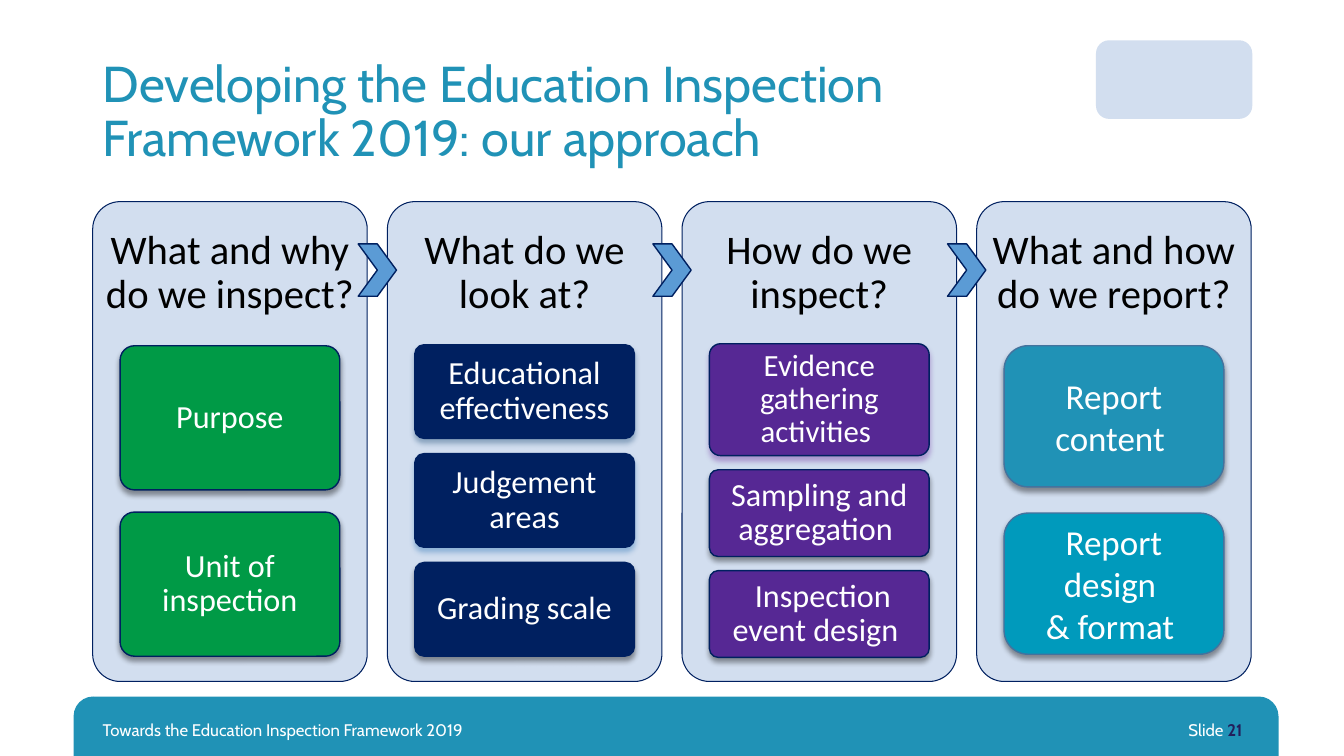
from dataclasses import dataclass
from typing import Any, NamedTuple

from lxml.etree import SubElement
from pptx import Presentation
from pptx.dml.color import RGBColor
from pptx.enum.shapes import MSO_SHAPE as Shape
from pptx.enum.text import MSO_ANCHOR as Anchor, MSO_AUTO_SIZE as AutoSize, PP_ALIGN as Align
from pptx.oxml.ns import qn
from pptx.util import Inches, Pt

WHITE = RGBColor(0xFF, 0xFF, 0xFF)
BLACK = RGBColor(0x00, 0x00, 0x00)
TEAL = RGBColor(0x20, 0x92, 0xB6)
CYAN = RGBColor(0x00, 0x9A, 0xBC)
NAVY = RGBColor(0x00, 0x20, 0x60)
INDIGO = RGBColor(0x22, 0x1E, 0x5B)
GREEN = RGBColor(0x00, 0x9A, 0x46)
PURPLE = RGBColor(0x56, 0x28, 0x94)
VIOLET = RGBColor(0x70, 0x30, 0xA0)
PALE_BLUE = RGBColor(0xD2, 0xDE, 0xEF)
SKY = RGBColor(0x5B, 0x9B, 0xD5)
STEEL = RGBColor(0x43, 0x73, 0x9E)
DEEP_BLUE = RGBColor(0x1F, 0x4E, 0x79)
MID_BLUE = RGBColor(0x2E, 0x75, 0xB6)

SLIDE_W, SLIDE_H = Inches(13.33), Inches(7.5)

# Every horizontal length is a percentage of the slide width, every vertical one of its height.
LEFT, CONTENT_W, GUTTER = 6.9, 86.2, 1.5
PANEL_TOP, PANEL_H, HEADING_H = 26.67, 63.47, 19.07
CARD_W = 16.35
CHEVRON_TOP, CHEVRON_W, CHEVRON_H = 32.27, 2.85, 6.93
FOOTER_TOP, FOOTER_H = 93.87, 5.33


class Box(NamedTuple):
    x: float
    y: float
    w: float
    h: float

    def emu(self) -> tuple[int, int, int, int]:
        return (int(SLIDE_W * self.x / 100), int(SLIDE_H * self.y / 100),
                int(SLIDE_W * self.w / 100), int(SLIDE_H * self.h / 100))


@dataclass
class Style:
    size: float
    color: RGBColor = WHITE
    font: str = "Calibri"
    align: Align = Align.CENTER
    spacing: float = 0.9
    inset_x: float = 0.06
    inset_y: float = 0.05


@dataclass
class Card:
    text: str
    height: float
    fill: RGBColor
    shadow: RGBColor = BLACK
    size: float = 23


@dataclass
class Column:
    heading: str
    top: float
    gap: float
    cards: list[Card]
    line: RGBColor = NAVY
    corner: float = 0.1
    spacing: float = 0.9
    inset_x: float = 0.06


COLUMNS = [
    Column("What and why do we inspect?", 45.73, 2.93, [
        Card("Purpose", 19.07, GREEN),
        Card("Unit of inspection", 19.07, GREEN)]),
    Column("What do we look at?", 45.6, 2, [
        Card("Educational effectiveness", 12.4, NAVY, DEEP_BLUE),
        Card("Judgement areas", 12.4, NAVY, MID_BLUE),
        Card("Grading scale", 12.4, NAVY)]),
    Column("How do we inspect?", 45.47, 1.87, [
        Card("Evidence gathering activities ", 14.8, PURPLE, VIOLET, 22),
        Card("Sampling and aggregation ", 11.47, PURPLE),
        Card(" Inspection event design ", 11.47, PURPLE)]),
    Column("What and how do we report?", 45.73, 3.47, [
        Card("Report content ", 18.67, TEAL, size=25),
        Card("Report design \n& format ", 18.67, CYAN, size=25)],
        STEEL, 0.17, 1, 0.1),
]
COLUMN_W = (CONTENT_W - GUTTER * (len(COLUMNS) - 1)) / len(COLUMNS)


def write(sp: Any, text: str, style: Style) -> None:
    tf = sp.text_frame
    frame_format = {
        "word_wrap": True, "auto_size": AutoSize.NONE, "vertical_anchor": Anchor.MIDDLE,
        "margin_left": Inches(style.inset_x), "margin_right": Inches(style.inset_x),
        "margin_top": Inches(style.inset_y), "margin_bottom": Inches(style.inset_y),
    }
    for name, value in frame_format.items():
        setattr(tf, name, value)
    tf.text = text
    for p in tf.paragraphs:
        p.alignment, p.line_spacing = style.align, style.spacing
        for r in p.runs:
            for name, value in {"name": style.font, "size": Pt(style.size)}.items():
                setattr(r.font, name, value)
            r.font.color.rgb = style.color


def add_text(slide: Any, box: Box, text: str, style: Style) -> Any:
    sp = slide.shapes.add_textbox(*box.emu())
    write(sp, text, style)
    return sp


def add_block(slide: Any, kind: Shape, box: Box, fill: RGBColor,
              line: RGBColor | None = None, width: float = 1,
              corner: float | None = None) -> Any:
    sp = slide.shapes.add_shape(kind, *box.emu())
    sp.shadow.inherit = False
    sp.fill.solid()
    sp.fill.fore_color.rgb = fill
    if line is None:
        sp.line.fill.background()
    else:
        sp.line.color.rgb, sp.line.width = line, Pt(width)
    if corner is not None:
        sp.adjustments[0] = corner
    return sp


def add_shadow(sp: Any, color: RGBColor) -> None:
    """Give the shape a soft shadow, straight down, at 40% opacity."""
    effects = sp._element.spPr.find(qn("a:effectLst"))
    shadow = SubElement(effects, qn("a:outerShdw"), blurRad=str(Pt(4)), dist=str(Pt(3)),
                        dir="5400000", rotWithShape="0")
    tint = SubElement(shadow, qn("a:srgbClr"), val=str(color))
    SubElement(tint, qn("a:alpha"), val="40000")


def add_column(slide: Any, column: Column, left: float) -> None:
    panel = Box(left, PANEL_TOP, COLUMN_W, PANEL_H)
    add_block(slide, Shape.ROUNDED_RECTANGLE, panel, PALE_BLUE, NAVY, 0.75, 0.1)
    add_text(slide, panel._replace(h=HEADING_H), column.heading,
             Style(29, BLACK, inset_x=0.12, inset_y=0.12))
    top = column.top
    for card in column.cards:
        box = Box(left + (COLUMN_W - CARD_W) / 2, top, CARD_W, card.height)
        sp = add_block(slide, Shape.ROUNDED_RECTANGLE, box, card.fill, column.line,
                       corner=column.corner)
        add_shadow(sp, card.shadow)
        write(sp, card.text, Style(card.size, spacing=column.spacing, inset_x=column.inset_x))
        top += card.height + column.gap


def add_footer(slide: Any) -> None:
    add_block(slide, Shape.ROUND_2_SAME_RECTANGLE, Box(5.48, 92.13, 89.65, 7.87), TEAL,
              corner=0.33)
    style = Style(12, font="Cabin", align=Align.LEFT, spacing=1, inset_x=0.1)
    add_text(slide, Box(LEFT, FOOTER_TOP, 60.39, FOOTER_H),
             "Towards the Education Inspection Framework 2019", style)
    style.align = Align.RIGHT
    sp = add_text(slide, Box(84.4, FOOTER_TOP, 8.78, FOOTER_H), "Slide ", style)
    r = sp.text_frame.paragraphs[0].add_run()
    r.text = "21"
    for name, value in {"name": "Cabin", "size": Pt(12), "bold": True}.items():
        setattr(r.font, name, value)
    r.font.color.rgb = INDIGO


def main() -> None:
    prs = Presentation()
    prs.slide_width, prs.slide_height = SLIDE_W, SLIDE_H
    slide = prs.slides.add_slide(prs.slide_layouts[5])

    title = slide.shapes.title
    title.left, title.top, title.width, title.height = Box(LEFT, 5.33, 73.82, 19.33).emu()
    write(title, "Developing the Education Inspection Framework 2019: our approach",
          Style(36, TEAL, "Cabin", Align.LEFT, inset_x=0.1))
    add_block(slide, Shape.ROUNDED_RECTANGLE, Box(81.55, 5.33, 11.63, 10.4), PALE_BLUE)

    lefts = [LEFT + i * (COLUMN_W + GUTTER) for i in range(len(COLUMNS))]
    for column, left in zip(COLUMNS, lefts):
        add_column(slide, column, left)
    for left in lefts[1:]:
        box = Box(left - (GUTTER + CHEVRON_W) / 2, CHEVRON_TOP, CHEVRON_W, CHEVRON_H)
        add_block(slide, Shape.CHEVRON, box, SKY, NAVY)
    add_footer(slide)
    prs.save("out.pptx")


if __name__ == "__main__":
    main()
